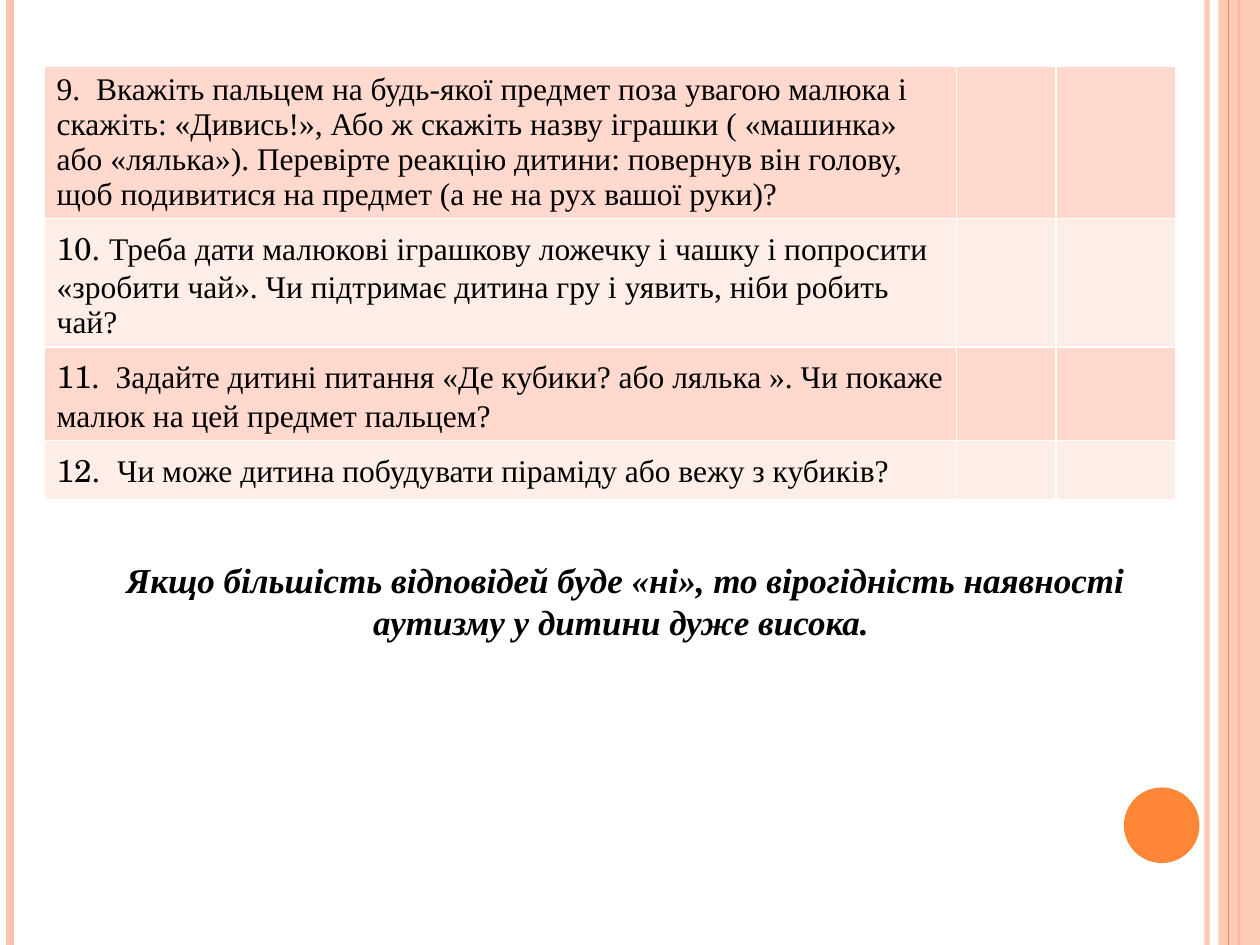
from lxml import etree
from pptx import Presentation
from pptx import util as u
from pptx.dml.color import RGBColor
from pptx.enum import shapes, text
from pptx.oxml import ns

WIDTH, HEIGHT = u.Inches(10), u.Inches(7.5)
COLORS = {
    "peach": "FEC3AE",
    "orange": "FE8637",
    "band_dark": "FFD9CE",
    "band_light": "FFEDE8",
    "border": "FFFFFF",
    "ink": "000000",
}
BODY_FONT = "Times New Roman"
NUMBER_FONT = "TeX Gyre Schola"
COLUMN_WIDTHS = [7.24, 0.79, 0.95]
ROW_HEIGHTS = [1.2, 1.02, 0.73, 0.46]
QUESTIONS = [
    ("", "9.  Вкажіть пальцем на будь-якої предмет поза увагою малюка і скажіть: "
         "«Дивись!», Або ж скажіть назву іграшки ( «машинка» або «лялька»). "
         "Перевірте реакцію дитини: повернув він голову, щоб подивитися на предмет "
         "(а не на рух вашої руки)?"),
    ("10. ", "Треба дати малюкові іграшкову ложечку і чашку і попросити "
             "«зробити чай». Чи підтримає дитина гру і уявить, ніби робить чай?"),
    ("11.", "  Задайте дитині питання «Де кубики? або лялька ». "
            "Чи покаже малюк на цей предмет пальцем?"),
    ("12. ", " Чи може дитина побудувати піраміду або вежу з кубиків?"),
]
CONCLUSION = ("Якщо більшість відповідей буде «ні», то вірогідність наявності "
              "аутизму у дитини дуже висока. ")


def color(name):
    return RGBColor.from_string(COLORS[name])


def add_child(parent, tag, **attributes):
    return etree.SubElement(parent, ns.qn(tag), attributes)


def set_opacity(element, percent):
    tint = next(element.iter(ns.qn("a:srgbClr")))
    add_child(tint, "a:alpha", val=str(percent * 1000))


def add_stripe(page, left, points, name, opacity=100):
    x = int(WIDTH * left)
    stripe = page.shapes.add_connector(shapes.MSO_CONNECTOR.STRAIGHT, x, 0, x, HEIGHT)
    stripe.line.color.rgb = color(name)
    stripe.line.width = u.Pt(points)
    properties = stripe._element.spPr
    if opacity < 100:
        set_opacity(properties, opacity)
    add_child(properties, "a:effectLst")


def add_filled(page, kind, left, top, width, height, name, opacity=100):
    shape = page.shapes.add_shape(kind, int(WIDTH * left), int(HEIGHT * top),
                                  int(WIDTH * width), int(HEIGHT * height))
    shape.shadow.inherit = False
    shape.fill.solid()
    shape.fill.fore_color.rgb = color(name)
    shape.line.fill.background()
    if opacity < 100:
        set_opacity(shape._element.spPr, opacity)


def style_cell(cell, band):
    properties = cell._tc.get_or_add_tcPr()
    for side in ("a:lnL", "a:lnR", "a:lnT", "a:lnB"):
        edge = add_child(properties, side, w=str(u.Pt(1)))
        add_child(add_child(edge, "a:solidFill"), "a:srgbClr", val=COLORS["border"])
    cell.fill.solid()
    cell.fill.fore_color.rgb = color(band)


def write_question(cell, number, question):
    para = cell.text_frame.paragraphs[0]
    para.font.size = u.Pt(18)
    para.font.color.rgb = color("ink")
    for words, font in ((number, NUMBER_FONT), (question, BODY_FONT)):
        if words:
            span = para.add_run()
            span.text = words
            span.font.name = font


def add_questions(page):
    frame = page.shapes.add_table(
        len(ROW_HEIGHTS), len(COLUMN_WIDTHS), int(WIDTH * 0.035), int(HEIGHT * 0.07),
        u.Inches(sum(COLUMN_WIDTHS)), u.Inches(sum(ROW_HEIGHTS)))
    table = frame.table
    table.first_row = table.horz_banding = False
    for column, width in zip(table.columns, COLUMN_WIDTHS):
        column.width = u.Inches(width)
    for index, (row, height) in enumerate(zip(table.rows, ROW_HEIGHTS)):
        row.height = u.Inches(height)
        for cell in row.cells:
            style_cell(cell, "band_light" if index % 2 else "band_dark")
        write_question(row.cells[0], *QUESTIONS[index])


def add_conclusion(page):
    box = page.shapes.add_textbox(int(WIDTH * 0.083), int(HEIGHT * 0.584),
                                  int(WIDTH * 0.827), int(HEIGHT * 0.144))
    box.text_frame.word_wrap = True
    para = box.text_frame.paragraphs[0]
    para.text = CONCLUSION
    para.alignment = text.PP_ALIGN.CENTER
    para.font.name = BODY_FONT
    para.font.size = u.Pt(20)
    para.font.bold = para.font.italic = True
    para.font.color.rgb = color("ink")


def add_decoration(page):
    kinds = shapes.MSO_SHAPE
    add_stripe(page, 0.958, 3, "peach", 93)
    add_stripe(page, 0.008, 4.5, "peach")
    add_stripe(page, 0.983, 1.5, "orange")
    add_filled(page, kinds.RECTANGLE, 0.967, 0, 0.033, 1, "peach", 87)
    add_stripe(page, 0.975, 0.75, "orange")
    add_filled(page, kinds.OVAL, 0.892, 6.25 / 7.5, 0.06, 0.08, "orange")


def main():
    deck = Presentation()
    deck.slide_width, deck.slide_height = WIDTH, HEIGHT
    page = deck.slides.add_slide(deck.slide_layouts[6])
    add_decoration(page)
    add_questions(page)
    add_conclusion(page)
    deck.save("out.pptx")


if __name__ == "__main__":
    main()
